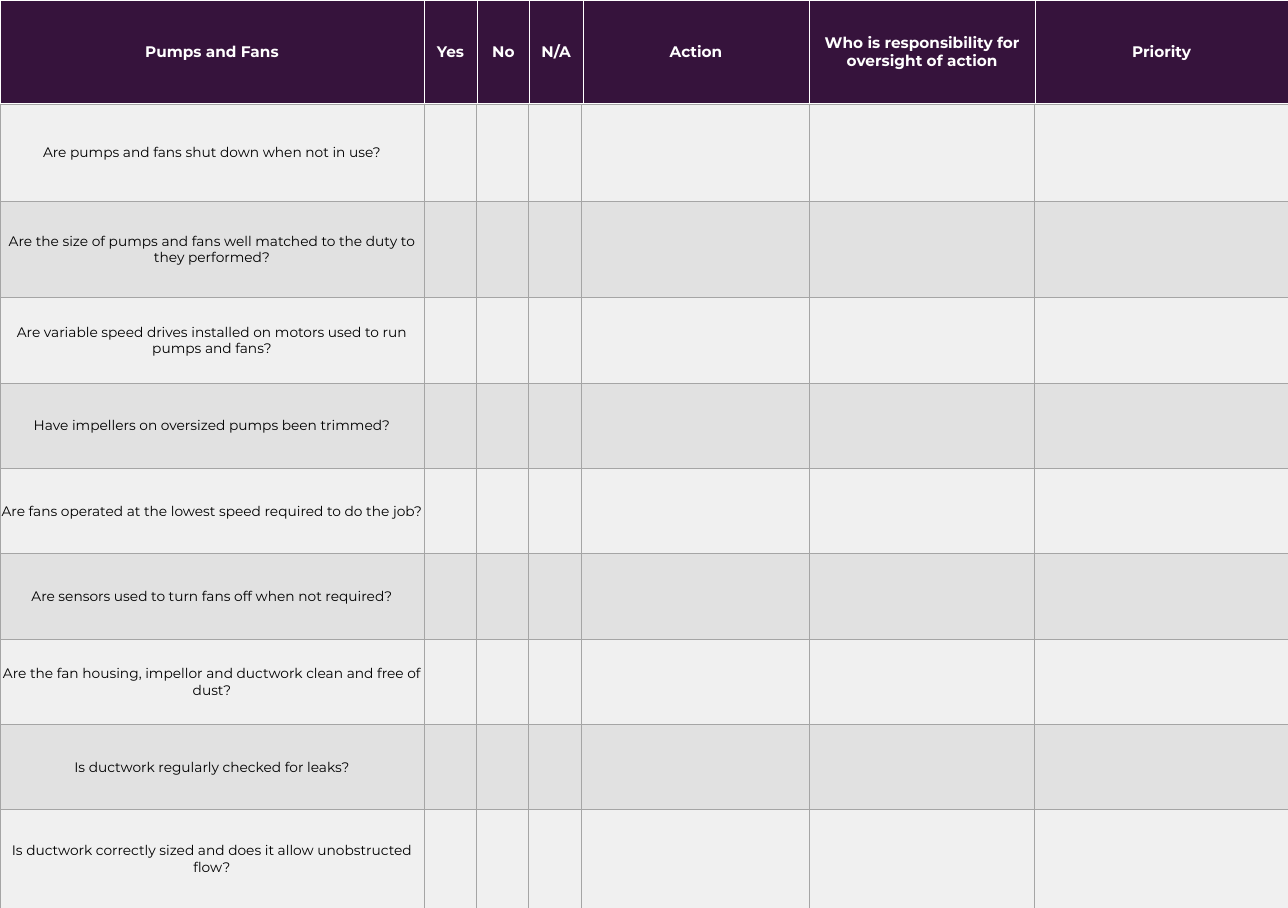
from lxml import etree
from pptx import Presentation
from pptx.dml.color import RGBColor
from pptx.enum.text import MSO_ANCHOR, PP_ALIGN
from pptx.oxml.ns import qn
from pptx.util import Inches, Pt

MIDDLE = MSO_ANCHOR.MIDDLE
CENTER = PP_ALIGN.CENTER

PLUM = RGBColor(0x36, 0x13, 0x3C)
WHITE = RGBColor(0xFF, 0xFF, 0xFF)
BLACK = RGBColor(0x00, 0x00, 0x00)
GREY = RGBColor(0xA5, 0xA5, 0xA5)
BANDS = (RGBColor(0xF0, 0xF0, 0xF0), RGBColor(0xE1, 0xE1, 0xE1))

PAGE_WIDTH, PAGE_HEIGHT = 23.4, 16.5
HEADER_HEIGHT = 1.89

HEADINGS = ["Pumps and Fans", "Yes", "No", "N/A", "Action",
            "Who is responsibility for oversight of action", "Priority"]
QUESTIONS = [
    "Are pumps and fans shut down when not in use?",
    "Are the size of pumps and fans well matched to the duty to they performed?",
    "Are variable speed drives installed on motors used to run pumps and fans?",
    "Have impellers on oversized pumps been trimmed?",
    "Are fans operated at the lowest speed required to do the job?",
    "Are sensors used to turn fans off when not required?",
    "Are the fan housing, impellor and ductwork clean and free of dust?",
    "Is ductwork regularly checked for leaks?",
    "Is ductwork correctly sized and does it allow unobstructed flow?",
]
HEADER_COLUMNS = [7.7, 0.97, 0.95, 0.97, 4.11, 4.11, 4.59]
BODY_COLUMNS = [7.7, 0.95, 0.95, 0.97, 4.14, 4.08, 4.61]
BODY_ROWS = [1.76] * 2 + [1.55] * 6 + [1.79]

HEADER_FONT = {"name": "Montserrat", "size": Pt(20), "bold": True}
BODY_FONT = {"name": "Montserrat", "size": Pt(18), "bold": False}
TIGHT_CELL = {"margin_left": Inches(0.01), "margin_right": Inches(0.01),
              "margin_top": Inches(0.01), "margin_bottom": 0}


def apply_format(target, values):
    for name, value in values.items():
        setattr(target, name, value)


def set_borders(cell, color, widths):
    """Draw the four cell edges; widths are points keyed by L, R, T and B."""
    properties = cell._tc.get_or_add_tcPr()
    for position, (side, width) in enumerate(widths.items()):
        line = etree.Element(qn(f"a:ln{side}"), w=str(Pt(width)))
        fill = etree.SubElement(line, qn("a:solidFill"))
        etree.SubElement(fill, qn("a:srgbClr"), val=str(color))
        properties.insert(position, line)


def write_cell(cell, text, fill, font, color):
    cell.fill.solid()
    cell.fill.fore_color.rgb = fill
    cell.vertical_anchor = MIDDLE
    if text:
        para = cell.text_frame.paragraphs[0]
        para.alignment = CENTER
        span = para.add_run()
        span.text = text
        apply_format(span.font, font)
        span.font.color.rgb = color


def add_grid(page, box, columns, rows):
    frame = page.shapes.add_table(len(rows), len(columns), *map(Inches, box))
    table = frame.table
    for column, width in zip(table.columns, columns):
        column.width = Inches(width)
    for row, height in zip(table.rows, rows):
        row.height = Inches(height)
    return table


def add_header(page, box):
    table = add_grid(page, box, HEADER_COLUMNS, [box[3]])
    for cell, heading in zip(table.iter_cells(), HEADINGS):
        write_cell(cell, heading, PLUM, HEADER_FONT, WHITE)
        set_borders(cell, WHITE, {"L": 1, "R": 1, "T": 1, "B": 3})


def add_checklist(page, box):
    table = add_grid(page, box, BODY_COLUMNS, BODY_ROWS)
    table.first_row = False
    for index, question in enumerate(QUESTIONS):
        for column, cell in enumerate(table.rows[index].cells):
            text = question if column == 0 else ""
            write_cell(cell, text, BANDS[index % 2], BODY_FONT, BLACK)
            apply_format(cell, TIGHT_CELL)
            set_borders(cell, GREY, dict.fromkeys("LRTB", 1))


def main():
    deck = Presentation()
    deck.slide_width = Inches(PAGE_WIDTH)
    deck.slide_height = Inches(PAGE_HEIGHT)
    page = deck.slides.add_slide(deck.slide_layouts.get_by_name("Blank"))

    # Column headings above, checklist filling the rest of the page
    add_header(page, (0, 0, PAGE_WIDTH, HEADER_HEIGHT))
    add_checklist(page, (0, HEADER_HEIGHT, PAGE_WIDTH, PAGE_HEIGHT - HEADER_HEIGHT))

    deck.save("out.pptx")


if __name__ == "__main__":
    main()
